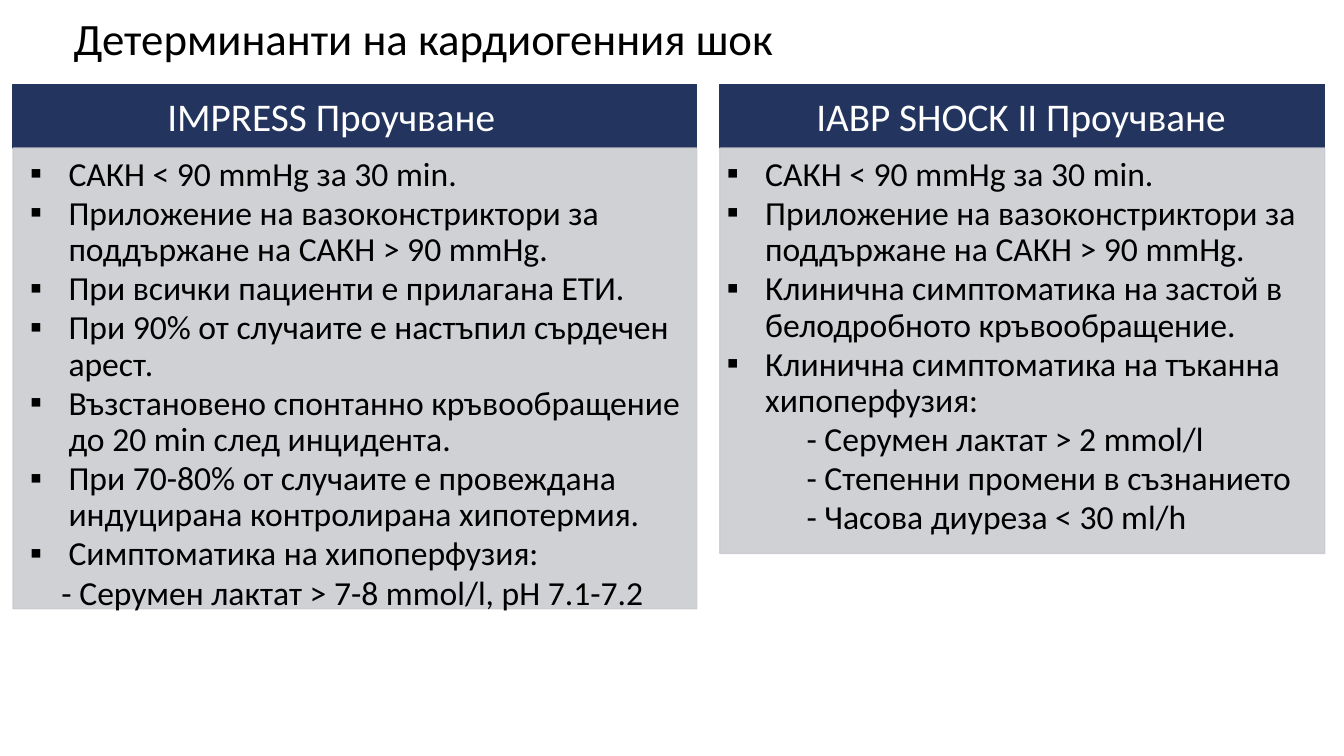
"""Build a slide comparing the cardiogenic shock criteria of two studies."""
import pptx
import pptx.dml.color
import pptx.enum.shapes
import pptx.enum.text
import pptx.oxml
import pptx.oxml.ns
import pptx.util
from pptx.util import Inches

COLORS = {"navy": "23345E", "grey": "CBCCD1", "black": "000000", "white": "FFFFFF"}
FONT = "Calibri"
HEADER_TOP, BODY_TOP = 0.84, 1.47
BULLET_INDENT = 0.38

IMPRESS = {
    "title": "IMPRESS Проучване",
    "panel": (0.13, 6.78, 4.57),
    "header": (0.39, 5.79),
    "body": (0.21, 6.7, 4.75),
    "bullets": [
        "САКН < 90 mmHg за 30 min.",
        "Приложение на вазоконстриктори за поддържане на САКН > 90 mmHg.",
        "При всички пациенти е прилагана ЕТИ.",
        "При 90% от случаите е настъпил сърдечен арест.",
        "Възстановeнo спонтанно кръвообращение до 20 min след инцидента.",
        "При 70-80% от случаите е провеждана индуцирана контролирана хипотермия.",
        "Симптоматика на хипоперфузия:",
    ],
    "details": ["- Серумен лактат > 7-8 mmol/l, pH 7.1-7.2"],
    "detail_level": 1,
    "detail_indent": 0.31,
}
IABP_SHOCK = {
    "title": "IABP SHOCK II Проучване",
    "panel": (7.14, 6, 4.02),
    "header": (7.23, 5.79),
    "body": (7.12, 6.16, 3.99),
    "bullets": [
        "САКН < 90 mmHg за 30 min.",
        "Приложение на вазоконстриктори за поддържане на САКН > 90 mmHg.",
        "Клинична симптоматика на застой в белодробното кръвообращение.",
        "Клинична симптоматика на тъканна хипоперфузия:",
    ],
    "details": [
        "- Серумен лактат > 2 mmol/l",
        "- Степенни промени в съзнанието",
        "- Часова диуреза < 30 ml/h",
    ],
    "detail_level": 3,
    "detail_indent": 0.79,
}


def rgb(name):
    """Return the named colour."""
    return pptx.dml.color.RGBColor.from_string(COLORS[name])


def add_panel(slide, box, color, alpha=None):
    """Add a filled rectangle, with fill and outline at alpha percent if given."""
    shape = slide.shapes.add_shape(
        pptx.enum.shapes.MSO_SHAPE.RECTANGLE, *map(Inches, box))
    shape.shadow.inherit = False
    shape.fill.solid()
    shape.fill.fore_color.rgb = rgb(color)
    shape.line.color.rgb = rgb(color)
    shape.line.width = pptx.util.Pt(1)
    if alpha:
        for element in shape._element.spPr.iter(pptx.oxml.ns.qn("a:srgbClr")):
            element.append(pptx.oxml.parse_xml(
                f'<a:alpha {pptx.oxml.ns.nsdecls("a")} val="{alpha * 1000}"/>'))


def add_text_box(slide, box, inset, anchor):
    """Add a wrapping text box with equal insets and return its text frame."""
    text_frame = slide.shapes.add_textbox(*map(Inches, box)).text_frame
    text_frame.word_wrap = True
    text_frame.vertical_anchor = anchor
    text_frame.margin_left = text_frame.margin_right = Inches(inset)
    text_frame.margin_top = text_frame.margin_bottom = Inches(inset)
    return text_frame


def format_paragraph(paragraph, size, color):
    """Set the line spacing and font of a paragraph and its runs."""
    paragraph.line_spacing = 0.9
    for run in paragraph.runs:
        run.font.name = FONT
        run.font.size = pptx.util.Pt(size)
        run.font.color.rgb = rgb(color)


def indent_paragraph(paragraph, left, bullet=None):
    """Indent a paragraph, hanging a bullet in the indent if given."""
    properties = paragraph._p.get_or_add_pPr()
    properties.set("marL", str(Inches(left)))
    properties.set("indent", str(-Inches(left) if bullet else 0))
    if bullet:
        namespace = pptx.oxml.ns.nsdecls("a")
        properties.append(pptx.oxml.parse_xml(f'<a:buFont {namespace} typeface="{FONT}"/>'))
        properties.append(pptx.oxml.parse_xml(f'<a:buChar {namespace} char="{bullet}"/>'))


def add_heading(slide, box, text, size, color, inset, alignment):
    """Add one vertically centred line of text."""
    text_frame = add_text_box(slide, box, inset, pptx.enum.text.MSO_ANCHOR.MIDDLE)
    text_frame.text = text
    paragraph = text_frame.paragraphs[0]
    paragraph.alignment = alignment
    format_paragraph(paragraph, size, color)


def add_criteria(slide, box, study):
    """Add the bulleted criteria of a study and the details below them."""
    text_frame = add_text_box(slide, box, 0.09, pptx.enum.text.MSO_ANCHOR.TOP)
    text_frame.text = "\n".join(study["bullets"] + study["details"])
    for index, paragraph in enumerate(text_frame.paragraphs):
        if index < len(study["bullets"]):
            paragraph.level = 1
            indent_paragraph(paragraph, BULLET_INDENT, "▪")
        else:
            paragraph.level = study["detail_level"]
            indent_paragraph(paragraph, study["detail_indent"])
        if index:
            paragraph.space_before = pptx.util.Pt(2)
        format_paragraph(paragraph, 24, "black")


def add_study(slide, study):
    """Add the header and criteria panels of one study."""
    left, width, height = study["panel"]
    add_panel(slide, (left, HEADER_TOP, width, BODY_TOP - HEADER_TOP), "navy")
    header_left, header_width = study["header"]
    add_heading(slide, (header_left, HEADER_TOP, header_width, 0.68), study["title"],
                28, "white", 0.12, pptx.enum.text.PP_ALIGN.CENTER)
    add_panel(slide, (left, BODY_TOP, width, height), "grey", 90)
    body_left, body_width, body_height = study["body"]
    add_criteria(slide, (body_left, BODY_TOP, body_width, body_height), study)


def main():
    """Build and save the presentation."""
    presentation = pptx.Presentation()
    presentation.slide_width = Inches(13.33)
    presentation.slide_height = Inches(7.5)
    slide = presentation.slides.add_slide(presentation.slide_layouts[6])
    add_heading(slide, (0.68, -0.19, 11.5, 1.2), "Детерминанти на кардиогенния шок",
                32, "black", 0.05, pptx.enum.text.PP_ALIGN.LEFT)
    for study in (IMPRESS, IABP_SHOCK):
        add_study(slide, study)
    presentation.save("out.pptx")


if __name__ == "__main__":
    main()
